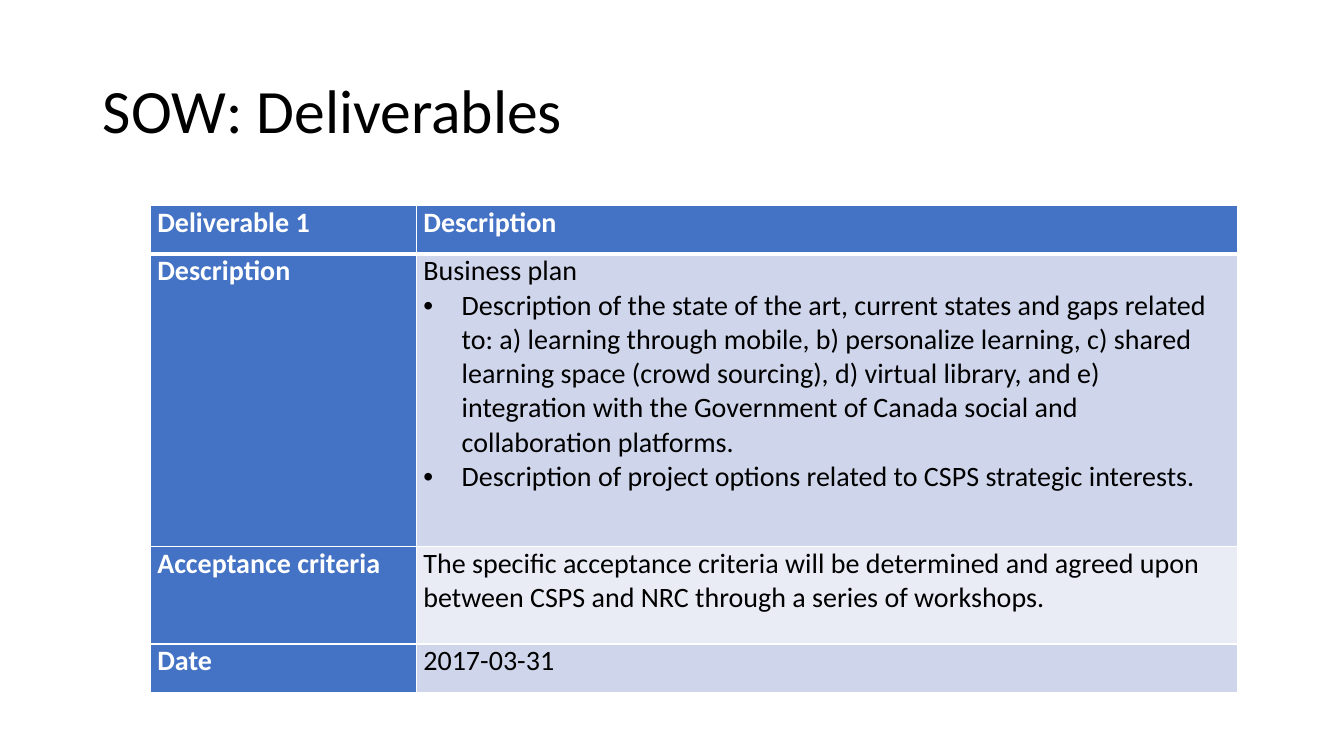
from lxml import etree
from pptx import Presentation
from pptx.dml.color import RGBColor
from pptx.enum.text import MSO_ANCHOR, PP_ALIGN
from pptx.oxml.ns import qn
from pptx.util import Inches, Pt

LEFT, TOP, MIDDLE = PP_ALIGN.LEFT, MSO_ANCHOR.TOP, MSO_ANCHOR.MIDDLE
BLACK = RGBColor(0x00, 0x00, 0x00)
WHITE = RGBColor(0xFF, 0xFF, 0xFF)
BLUE = RGBColor(0x44, 0x72, 0xC4)
BAND_DARK = RGBColor(0xCF, 0xD5, 0xEA)
BAND_LIGHT = RGBColor(0xE9, 0xEB, 0xF5)

TITLE = "SOW: Deliverables"
BULLET = "•"
# Each row: label, lines of the second column (a leading bullet marks a list item)
ROWS = [
    ("Deliverable 1", ["Description"]),
    ("Description", [
        "Business plan",
        "•Description of the state of the art, current states and gaps related to: "
        "a) learning through mobile, b) personalize learning, c) shared learning space "
        "(crowd sourcing), d) virtual library, and e) integration with the Government "
        "of Canada social and collaboration platforms.",
        "•Description of project options related to CSPS strategic interests.",
    ]),
    ("Acceptance criteria", [
        "The specific acceptance criteria will be determined and agreed upon "
        "between CSPS and NRC through a series of workshops.",
    ]),
    ("Date", ["2017-03-31"]),
]
COLUMN_WIDTHS = [2.64, 8.14]
ROW_HEIGHTS = [0.48, 2.9, 0.97, 0.48]


def write_lines(frame, lines, size=20, color=BLACK, bold=False, spacing=1.0):
    """Fill a text frame with one paragraph per line, bulleting marked lines."""
    for index, line in enumerate(lines):
        para = frame.paragraphs[0] if index == 0 else frame.add_paragraph()
        para.alignment = LEFT
        para.line_spacing = spacing
        if line.startswith(BULLET):
            add_bullet(para)
        span = para.add_run()
        span.text = line.removeprefix(BULLET)
        span.font.name = "Calibri"
        span.font.size = Pt(size)
        span.font.bold = bold
        span.font.color.rgb = color


def add_bullet(para):
    properties = para._p.get_or_add_pPr()
    properties.set("marL", str(Inches(0.38)))
    properties.set("indent", str(-Inches(0.38)))
    etree.SubElement(properties, qn("a:buFont")).set("typeface", "Arial")
    etree.SubElement(properties, qn("a:buChar")).set("char", BULLET)


def set_borders(cell, widths):
    """Draw white cell borders; widths are points for left, right, top, bottom."""
    properties = cell._tc.get_or_add_tcPr()
    for index, (side, width) in enumerate(zip("LRTB", widths)):
        line = etree.Element(qn(f"a:ln{side}"), w=str(Pt(width)))
        fill = etree.SubElement(line, qn("a:solidFill"))
        etree.SubElement(fill, qn("a:srgbClr")).set("val", str(WHITE))
        properties.insert(index, line)


def fill_cell(cell, lines, row, column):
    heading = row == 0 or column == 0
    cell.margin_left = cell.margin_right = Inches(0.07)
    cell.margin_top = cell.margin_bottom = 0
    cell.vertical_anchor = TOP
    cell.fill.solid()
    band = BAND_DARK if row % 2 else BAND_LIGHT
    cell.fill.fore_color.rgb = BLUE if heading else band
    set_borders(cell, (1, 1, 3 if row == 1 else 1, 3 if row == 0 else 1))
    write_lines(cell.text_frame, lines, color=WHITE if heading else BLACK, bold=heading)


def main():
    deck = Presentation()
    deck.slide_width, deck.slide_height = Inches(13.33), Inches(7.5)
    page = deck.slides.add_slide(deck.slide_layouts[5])

    title = page.shapes.title
    title.left, title.top = Inches(0.92), Inches(0.4)
    title.width, title.height = Inches(11.5), Inches(1.45)
    title.text_frame.vertical_anchor = MIDDLE
    write_lines(title.text_frame, [TITLE], size=44, spacing=0.9)

    table = page.shapes.add_table(
        len(ROWS), len(COLUMN_WIDTHS), Inches(1.49), Inches(2.04),
        Inches(sum(COLUMN_WIDTHS)), Inches(sum(ROW_HEIGHTS))).table
    table.first_col = True
    for column, width in zip(table.columns, COLUMN_WIDTHS):
        column.width = Inches(width)
    for row, (label, lines) in enumerate(ROWS):
        table.rows[row].height = Inches(ROW_HEIGHTS[row])
        fill_cell(table.cell(row, 0), [label], row, 0)
        fill_cell(table.cell(row, 1), lines, row, 1)

    deck.save("out.pptx")


if __name__ == "__main__":
    main()
